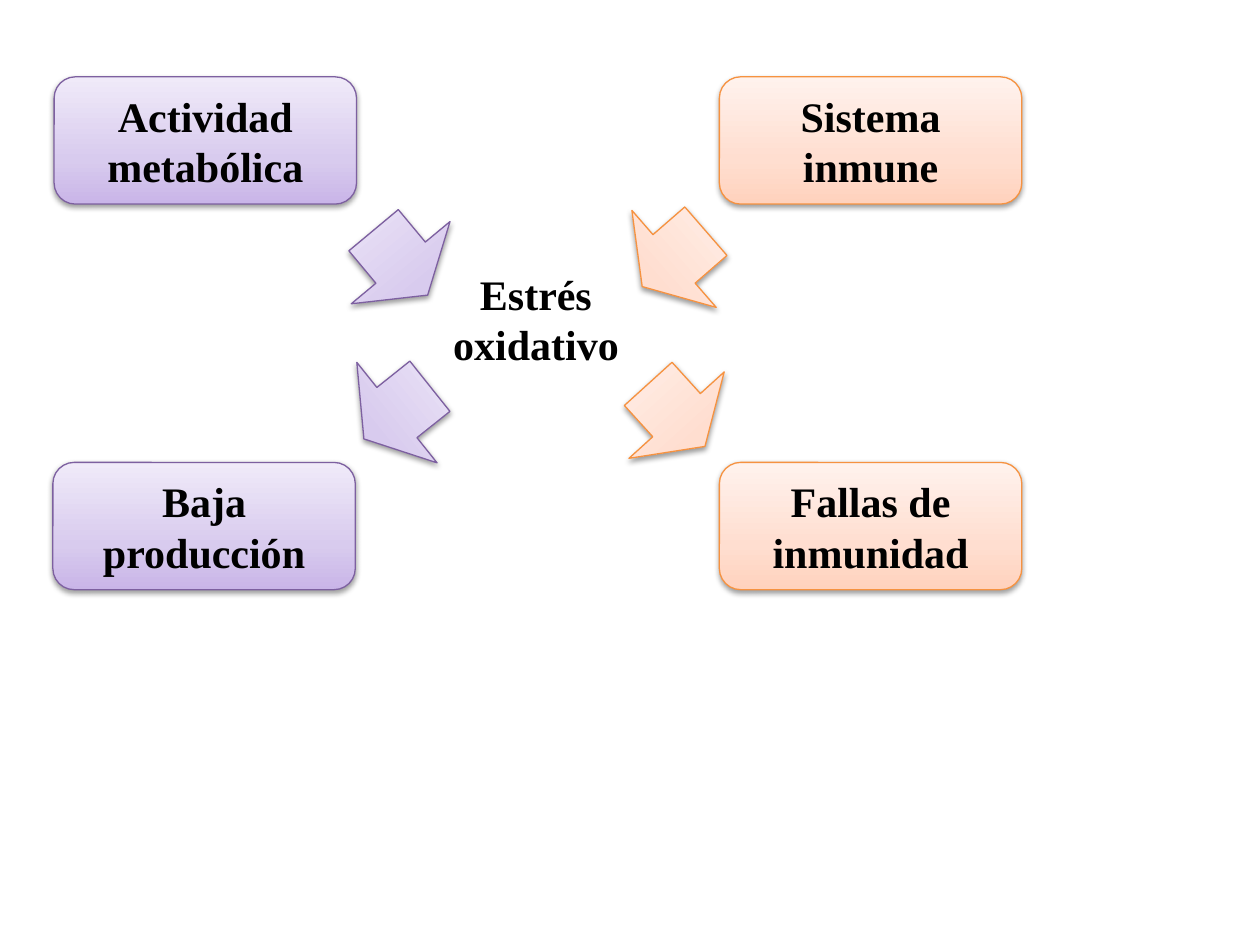
from copy import deepcopy
from dataclasses import dataclass

from lxml import etree
from pptx import Presentation
from pptx import util as u
from pptx.dml.color import RGBColor
from pptx.enum import shapes, text
from pptx.oxml.ns import qn


@dataclass(frozen=True)
class Palette:
    stops: tuple[str, str, str]  # bottom to top
    outline: str


@dataclass(frozen=True)
class Theme:
    purple: Palette = Palette(("C9B5E8", "D8CBEE", "F0EAF9"), "7D60A0")
    orange: Palette = Palette(("FFD2BD", "FFDED0", "FFF2ED"), "F69240")
    stop_positions: tuple[float, ...] = (0, 0.35, 1)
    ink: str = "000000"
    font: str = "Times New Roman"
    size: float = 24
    outline_width: float = 0.75


@dataclass(frozen=True)
class Factor:
    """A labelled box and the arrow linking it with the centre."""
    label: str
    palette: Palette
    box_at: tuple[float, float]
    arrow_at: tuple[float, float]
    rotation: float


THEME = Theme()

# Grid of 100 columns by 75 rows over the slide
SLIDE_WIDTH, SLIDE_HEIGHT = u.Inches(10), u.Inches(7.5)
COLUMN, ROW = SLIDE_WIDTH / 100, SLIDE_HEIGHT / 75
BOX_SIZE = (24, 10.1)
ARROW_SIZE = (10.2, 6.7)
RIGHT, TOP, BOTTOM = 57.1, 6.1, 36.7

FACTORS = (
    Factor("Actividad metabólica", THEME.purple, (4.3, TOP), (26.7, 17.5), 320.2),
    Factor("Baja producción", THEME.purple, (4.2, BOTTOM), (26.4, 29.4), 51.4),
    Factor("Sistema inmune", THEME.orange, (RIGHT, TOP), (48.4, 17.2), 49),
    Factor("Fallas de inmunidad", THEME.orange, (RIGHT, BOTTOM), (48.6, 29.6), 317.8),
)


def place(at: tuple[float, float], size: tuple[float, float]) -> tuple[int, ...]:
    """Turn grid columns and rows into slide lengths."""
    return tuple(round(cells * unit) for cells, unit in zip(at + size, (COLUMN, ROW) * 2))


def write(shape, content: str, wrap: bool) -> None:
    frame = shape.text_frame
    frame.text = content
    frame.word_wrap = wrap
    frame.auto_size = text.MSO_AUTO_SIZE.SHAPE_TO_FIT_TEXT
    for paragraph in frame.paragraphs:
        paragraph.alignment = text.PP_ALIGN.CENTER
        for run in paragraph.runs:
            run.font.name = THEME.font
            run.font.size = u.Pt(THEME.size)
            run.font.bold = True
            run.font.color.rgb = RGBColor.from_string(THEME.ink)


def paint(shape, palette: Palette) -> None:
    """Apply the three-stop gradient, the outline and the soft shadow."""
    properties = shape._element.spPr
    shape.fill.gradient()
    shape.fill.gradient_angle = 90
    first_stop = properties.find(".//" + qn("a:gs"))
    first_stop.addnext(deepcopy(first_stop))
    for stop, color, position in zip(
        shape.fill.gradient_stops, palette.stops, THEME.stop_positions
    ):
        stop.color.rgb = RGBColor.from_string(color)
        stop.position = position

    shape.line.color.rgb = RGBColor.from_string(palette.outline)
    shape.line.width = u.Pt(THEME.outline_width)

    shape.shadow.inherit = False
    shadow = etree.SubElement(
        properties.find(qn("a:effectLst")), qn("a:outerShdw"),
        blurRad="40000", dist="20000", dir="5400000", rotWithShape="0",
    )
    shade = etree.SubElement(shadow, qn("a:srgbClr"), val=THEME.ink)
    etree.SubElement(shade, qn("a:alpha"), val="38000")


def draw_box(slide, factor: Factor) -> None:
    box = slide.shapes.add_shape(
        shapes.MSO_SHAPE.ROUNDED_RECTANGLE, *place(factor.box_at, BOX_SIZE)
    )
    paint(box, factor.palette)
    write(box, factor.label, wrap=True)


def draw_arrow(slide, factor: Factor) -> None:
    arrow = slide.shapes.add_shape(
        shapes.MSO_SHAPE.DOWN_ARROW, *place(factor.arrow_at, ARROW_SIZE)
    )
    arrow.rotation = factor.rotation
    paint(arrow, factor.palette)


def main() -> None:
    deck = Presentation()
    deck.slide_width, deck.slide_height = SLIDE_WIDTH, SLIDE_HEIGHT
    slide = deck.slides.add_slide(deck.slide_layouts[6])

    # Central concept
    stress = slide.shapes.add_textbox(*place((34.9, 20.8), (16.1, 9.1)))
    write(stress, "Estrés \noxidativo ", wrap=False)

    # Causes above, consequences below
    for factor in FACTORS:
        draw_box(slide, factor)
        draw_arrow(slide, factor)

    deck.save("out.pptx")


if __name__ == "__main__":
    main()
